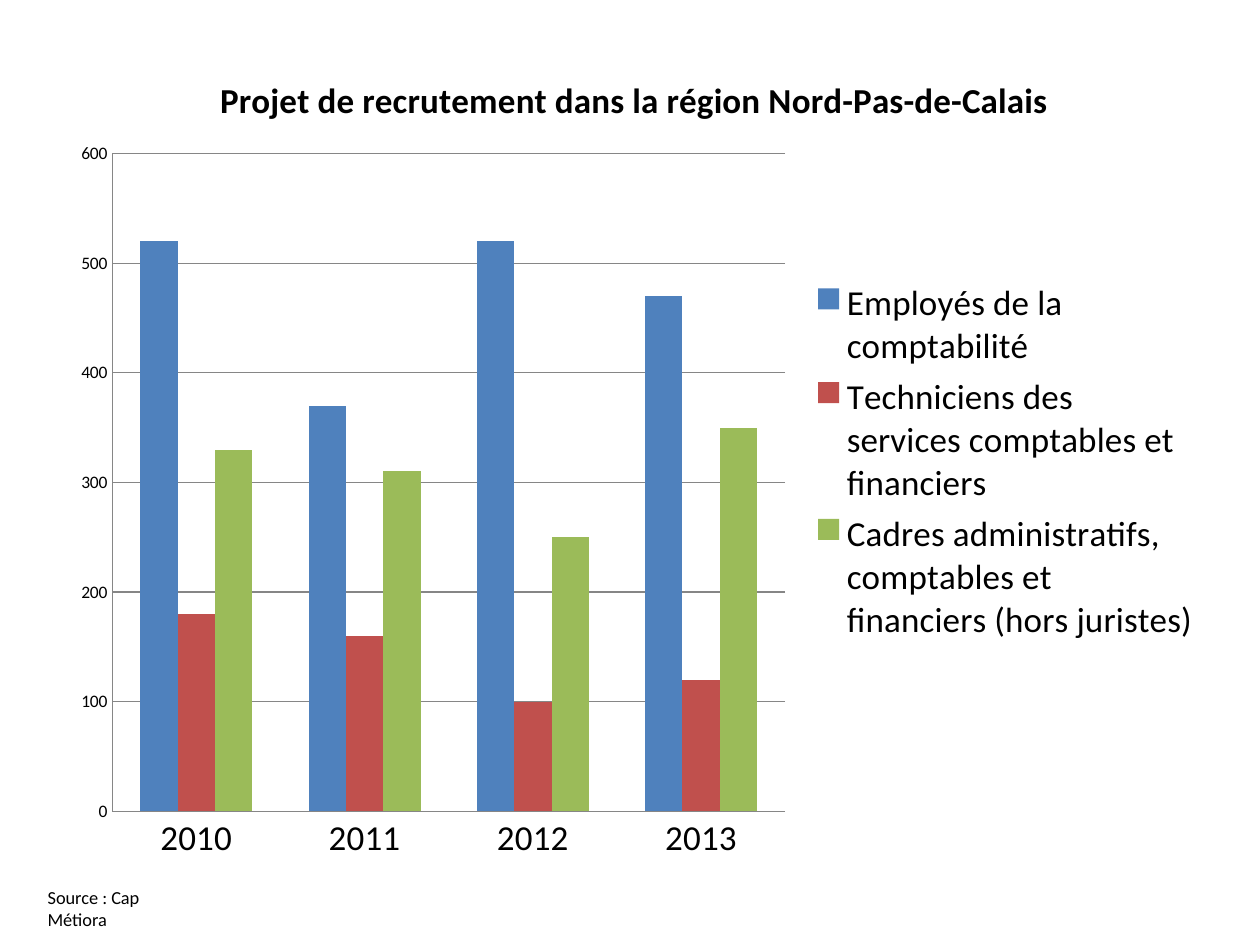
"""Build a slide with a column chart of recruitment plans by year."""
from lxml import etree
from pptx import Presentation
from pptx import util as u
from pptx.chart.data import CategoryChartData
from pptx.dml.color import RGBColor
from pptx.enum import chart as ch
from pptx.oxml.ns import qn

PX = 9144
TITLE = "Projet de recrutement dans la région Nord-Pas-de-Calais"
SOURCE = "Source : Cap Métiora"
YEARS = ["2010", "2011", "2012", "2013"]
SERIES = [
    ("Employés de la comptabilité", "4F81BD", (520, 370, 520, 470)),
    ("Techniciens des services comptables et financiers", "C0504D",
     (180, 160, 100, 120)),
    ("Cadres administratifs, comptables et financiers (hors juristes)",
     "9BBB59", (330, 310, 250, 350)),
]
CHART = (43, 36, 921, 661)
NOTE = (28, 698, 142, 28)
PLOT = {"x": 0.05, "y": 0.13, "w": 0.58, "h": 0.79}


def px(box):
    return [u.Emu(n * PX) for n in box]


def tint(hue):
    return RGBColor.from_string(hue)


def style(font, size, bold=False):
    form = {"name": "Calibri", "size": u.Pt(size), "bold": bold}
    for key, val in form.items():
        setattr(font, key, val)
    font.color.rgb = tint("000000")


def place(area, box):
    for old in area.findall(qn("c:layout")):
        area.remove(old)
    lay = etree.Element(qn("c:layout"))
    man = etree.SubElement(lay, qn("c:manualLayout"))
    rows = {"layoutTarget": "inner", "xMode": "edge", "yMode": "edge", **box}
    for tag, val in rows.items():
        etree.SubElement(man, qn("c:" + tag)).set("val", str(val))
    area.insert(0, lay)


def draw(slide):
    data = CategoryChartData(number_format="#,##0")
    data.categories = YEARS
    for name, _, vals in SERIES:
        data.add_series(name, vals)
    chart = slide.shapes.add_chart(
        ch.XL_CHART_TYPE.COLUMN_CLUSTERED, *px(CHART), data).chart
    style(chart.font, 10)
    chart.has_title = True
    chart.chart_title.include_in_layout = False
    head = chart.chart_title.text_frame
    head.text = TITLE
    style(head.paragraphs[0].runs[0].font, 20, True)

    plot = chart.plots[0]
    plot.gap_width, plot.overlap, plot.vary_by_categories = 150, 0, False
    for bar, (_, hue, _) in zip(plot.series, SERIES):
        bar.format.fill.solid()
        bar.format.fill.fore_color.rgb = tint(hue)

    cat, val = chart.category_axis, chart.value_axis
    val.minimum_scale, val.maximum_scale, val.major_unit = 0, 600, 100
    val.has_major_gridlines = True
    for axis, size in ((cat, 20), (val, 10)):
        axis.major_tick_mark = axis.minor_tick_mark = ch.XL_TICK_MARK.NONE
        style(axis.tick_labels.font, size)
    for part in (cat, val, val.major_gridlines):
        part.format.line.color.rgb = tint("868686")
        part.format.line.width = u.Pt(0.75)

    chart.has_legend = True
    key = chart.legend
    key.position = ch.XL_LEGEND_POSITION.RIGHT
    key.include_in_layout = False
    style(key.font, 20)
    place(cat._element.getparent(), PLOT)


def note(slide):
    frame = slide.shapes.add_textbox(*px(NOTE)).text_frame
    frame.word_wrap = False
    frame.text = SOURCE
    style(frame.paragraphs[0].runs[0].font, 10.5)


def main():
    deck = Presentation()
    deck.slide_width, deck.slide_height = px((1000, 750))
    slide = deck.slides.add_slide(deck.slide_layouts[6])
    draw(slide)
    note(slide)
    deck.save("out.pptx")


if __name__ == "__main__":
    main()
